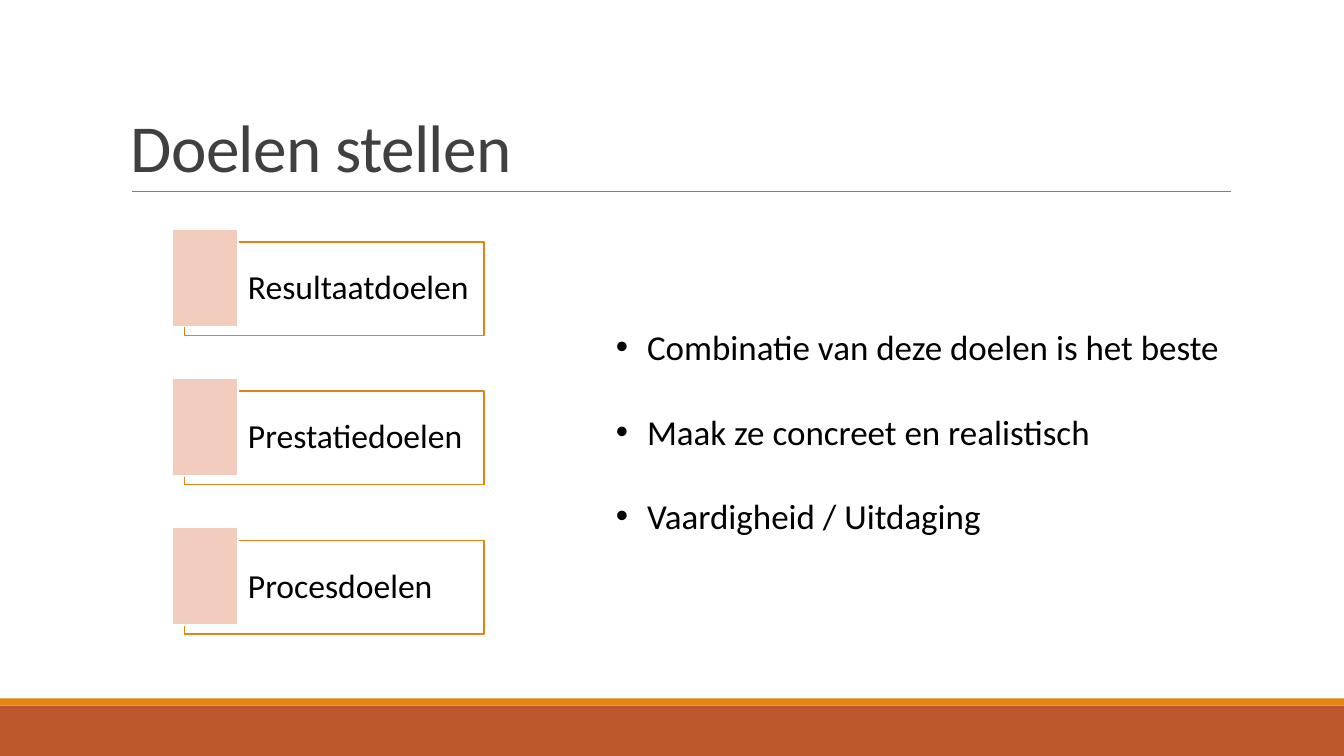
from pptx import Presentation
from pptx.dml.color import RGBColor
from pptx.enum.shapes import MSO_CONNECTOR, MSO_SHAPE
from pptx.enum.text import MSO_ANCHOR, PP_ALIGN
from pptx.oxml.ns import qn
from pptx.util import Inches, Pt
from lxml import etree

RECT = MSO_SHAPE.RECTANGLE
STRAIGHT = MSO_CONNECTOR.STRAIGHT
MIDDLE, BOTTOM = MSO_ANCHOR.MIDDLE, MSO_ANCHOR.BOTTOM
LEFT = PP_ALIGN.LEFT

FONT = "Calibri"
WHITE = RGBColor(0xFF, 0xFF, 0xFF)
BLACK = RGBColor(0x00, 0x00, 0x00)
DARK_GREY = RGBColor(0x40, 0x40, 0x40)
GREY = RGBColor(0x80, 0x80, 0x80)
ORANGE = RGBColor(0xE4, 0x83, 0x12)
RUST = RGBColor(0xBD, 0x58, 0x2C)
PEACH = RGBColor(0xF2, 0xCD, 0xBD)

GOALS = ["Resultaatdoelen", "Prestatiedoelen", "Procesdoelen"]
GOAL_TOP, GOAL_PITCH = 2.4, 1.48
ADVICE = [
    "Combinatie van deze doelen is het beste",
    "Maak ze concreet en realistisch",
    "Vaardigheid / Uitdaging",
]

prs = Presentation()
prs.slide_width, prs.slide_height = Inches(13.33), Inches(7.5)
s = prs.slides.add_slide(prs.slide_layouts[6])


def add_rect(left, top, width, height, fill, line=None, line_width=1):
    sp = s.shapes.add_shape(RECT, Inches(left), Inches(top), Inches(width), Inches(height))
    sp.shadow.inherit = False
    sp.fill.solid()
    sp.fill.fore_color.rgb = fill
    if line is None:
        sp.line.fill.background()
    else:
        sp.line.color.rgb = line
        sp.line.width = Pt(line_width)
    return sp


def add_run(p, text, size, color):
    r = p.add_run()
    r.text = text
    r.font.name = FONT
    r.font.size = Pt(size)
    r.font.color.rgb = color
    return r


# Footer bands
add_rect(0, 7, 13.33, 0.5, RUST)
add_rect(0, 6.93, 13.33, 0.07, ORANGE)

# Title and the rule under it
rule = s.shapes.add_connector(STRAIGHT, Inches(1.31), Inches(1.9), Inches(12.21), Inches(1.9))
rule.line.color.rgb = GREY
rule.line.width = Pt(0.5)
etree.SubElement(rule._element.spPr, qn("a:effectLst"))

title = s.shapes.add_textbox(Inches(1.2), Inches(0.31), Inches(11), Inches(1.59))
tf = title.text_frame
tf.word_wrap = True
tf.vertical_anchor = BOTTOM
p = tf.paragraphs[0]
p.line_spacing = 0.85
r = add_run(p, "Doelen stellen", 48, DARK_GREY)
r.font._element.set("spc", "-50")

# Goals, each with a tab over its left edge
for i, goal in enumerate(GOALS):
    top = GOAL_TOP + i * GOAL_PITCH
    box = add_rect(1.83, top, 2.97, 0.93, WHITE, ORANGE)
    tf = box.text_frame
    tf.word_wrap = True
    tf.vertical_anchor = MIDDLE
    tf.margin_left = Inches(0.63)
    tf.margin_top = tf.margin_right = tf.margin_bottom = Inches(0.1)
    p = tf.paragraphs[0]
    p.alignment = LEFT
    p.line_spacing = 0.9
    add_run(p, goal, 24, BLACK)
    add_rect(1.71, top - 0.13, 0.65, 0.97, PEACH, WHITE, 1.25)

# Advice
advice = s.shapes.add_textbox(Inches(6.01), Inches(3.18), Inches(7), Inches(2.2))
tf = advice.text_frame
tf.word_wrap = True
for i, text in enumerate(ADVICE):
    p = tf.add_paragraph() if i else tf.paragraphs[0]
    if i:
        p.space_before = Pt(30.5)
    pPr = p._p.get_or_add_pPr()
    pPr.set("marL", str(Inches(0.31)))
    pPr.set("indent", str(-Inches(0.31)))
    etree.SubElement(pPr, qn("a:buFont"), typeface="Arial")
    etree.SubElement(pPr, qn("a:buChar"), char="•")
    add_run(p, text, 25, BLACK)

prs.save("out.pptx")
